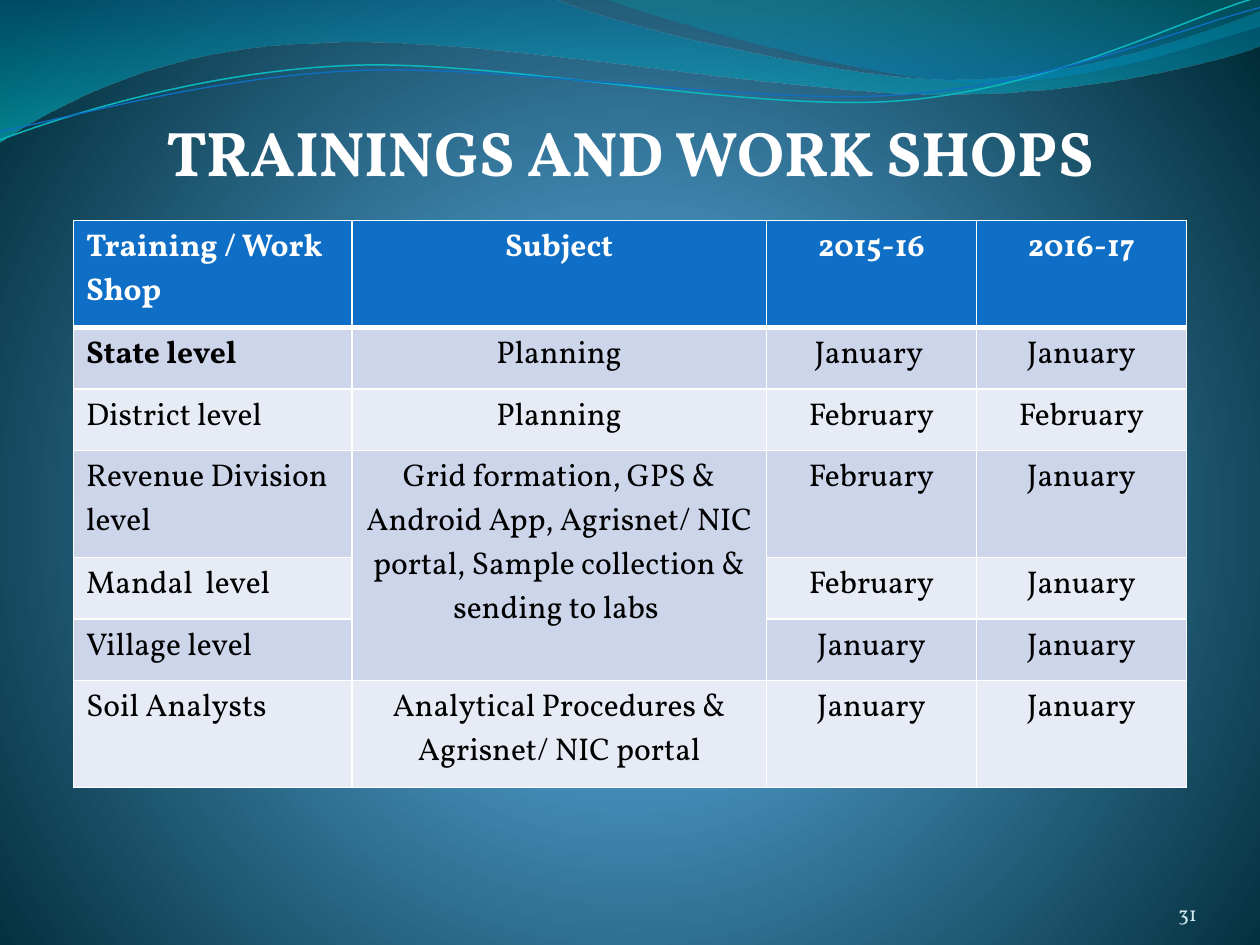
from itertools import chain

from lxml import etree
from pptx import Presentation
from pptx.dml.color import RGBColor
from pptx.enum.text import MSO_ANCHOR as Anchor, PP_ALIGN as Align
from pptx.oxml import parse_xml
from pptx.oxml.ns import nsdecls, qn
from pptx.util import Pt

FONT = "Vollkorn"
COLORS = {
    "white": "FFFFFF", "black": "000000", "header": "0F6FC6",
    "band_dark": "CCD5EA", "band_light": "E7EBF5", "number": "D1EAEE",
    "teal_line": "0AB8BF", "blue_line": "0F6FC6",
    "glow": "4AA0D6", "glow_mid": "4C98C7", "edge": "002C38",
    "wave_blue": "0074A1", "wave_teal": "00C6CF",
    "crest_teal": "00A1A9", "crest_blue": "008BBF",
}
DOWNWARD = '<a:lin ang="5400000" scaled="0"/>'
RADIAL = ('<a:path path="circle">'
          '<a:fillToRect l="10000" t="110000" r="10000" b="100000"/></a:path>')

# Each step is one point (straight) or two controls and an end (cubic curve).
WAVE = [
    ((0, 0),),
    ((316.8, -0.7),),
    ((342.7, 12.2), (478.1, 45.4), (545.8, 45.4)),
    ((614.2, 45.4), (689.8, 18.7), (720, 6.5)),
    ((720.7, 25.9),),
    ((707.8, 31.7), (626.4, 54.7), (537.1, 54)),
    ((447.8, 54), (275, 20.2), (185, 24.5)),
    ((92.9, 25.9), (33.1, 59.8), (-0.7, 81.4)),
]
CREST = [
    ((345, -0.7),),
    ((366.5, 7.9), (491, 44.6), (553.7, 46.8)),
    ((616.3, 49.7), (691.9, 23), (720, 15.1)),
    ((720, 0),),
]
CURVE_TILT = -2.7
TEAL_CURVE = [
    ((-1.4, 63),),
    ((33.8, 51.7), (114.1, 29.4), (199.8, 29.9)),
    ((284.9, 30.3), (425.8, 67.3), (512.4, 64.9)),
    ((599, 62.4), (676.5, 25.7), (720.2, 15.5)),
]
BLUE_CURVE = [
    ((-1.1, 58),),
    ((32.9, 53.7), (118.3, 32.5), (204.1, 33)),
    ((290.6, 33.4), (428.9, 63.8), (515.5, 61.4)),
    ((601.3, 59.6), (678.5, 30.1), (721.4, 21.3)),
]

COLUMN_WIDTHS = [159, 237, 120, 120]
TALL, SHORT = 61.2, 35.1
ROW_HEIGHTS = [TALL, SHORT, SHORT, TALL, SHORT, SHORT, TALL]
SCHEDULE = [
    ["Training / Work Shop", "Subject", "2015-16", "2016-17"],
    ["State level", "Planning", "January ", "January"],
    ["District level", "Planning", "February", "February"],
    ["Revenue Division level",
     "Grid formation, GPS & Android App, Agrisnet/ NIC portal, "
     "Sample collection & sending to labs ", "February", "January"],
    ["Mandal  level", None, "February", "January"],
    ["Village level", None, "January", "January"],
    ["Soil Analysts", "Analytical Procedures & Agrisnet/ NIC portal",
     "January", "January"],
]


def rgb(name):
    return RGBColor.from_string(COLORS[name])


def set_gradient(fill, owner, stops, direction):
    """Give the fill found inside owner stops of (percent, color, opacity)."""
    fill.solid()
    solid = owner.find(".//" + qn("a:solidFill"))
    marks = "".join(
        f'<a:gs pos="{position * 1000}"><a:srgbClr val="{COLORS[color]}">'
        f'<a:alpha val="{opacity * 1000}"/></a:srgbClr></a:gs>'
        for position, color, opacity in stops)
    solid.getparent().replace(solid, parse_xml(
        f'<a:gradFill {nsdecls("a")} rotWithShape="1">'
        f'<a:gsLst>{marks}</a:gsLst>{direction}</a:gradFill>'))


def bend(outline, steps):
    """Join the straight segments of each three-point step into one cubic."""
    segments = iter(outline.element.findall(".//" + qn("a:lnTo")))
    for step in steps[1:]:
        parts = [next(segments) for _ in step]
        if len(parts) == 3:
            cubic = etree.Element(qn("a:cubicBezTo"))
            parts[0].addprevious(cubic)
            for part in parts:
                cubic.append(part[0])
                part.getparent().remove(part)


def add_outline(slide, steps, close):
    points = [(x * 100, y * 100) for x, y in chain.from_iterable(steps)]
    builder = slide.shapes.build_freeform(*points[0], scale=Pt(1) / 100)
    builder.add_line_segments(points[1:], close=close)
    outline = builder.convert_to_shape()
    bend(outline, steps)
    outline.shadow.inherit = False
    return outline


def add_wave(slide, steps, stops):
    wave = add_outline(slide, steps, True)
    wave.line.fill.background()
    set_gradient(wave.fill, wave.element.spPr, stops, DOWNWARD)


def add_curve(slide, steps, color, width):
    curve = add_outline(slide, steps, False)
    curve.rotation = CURVE_TILT
    curve.fill.background()
    curve.line.color.rgb = rgb(color)
    curve.line.width = Pt(width)


def write(frame, text, size, color, align, bold=False):
    paragraph = frame.paragraphs[0]
    paragraph.alignment = align
    run = paragraph.add_run()
    run.text = text
    run.font.name = FONT
    run.font.size = Pt(size)
    run.font.bold = bold
    run.font.color.rgb = rgb(color)


def add_label(slide, box, text, size, color, align, bold=False, top_inset=0):
    frame = slide.shapes.add_textbox(*map(Pt, box)).text_frame
    frame.word_wrap = True
    frame.vertical_anchor = Anchor.BOTTOM
    frame.margin_left = frame.margin_right = frame.margin_bottom = 0
    frame.margin_top = Pt(top_inset)
    write(frame, text, size, color, align, bold)


def set_borders(cell, widths):
    properties = cell._tc.get_or_add_tcPr()
    for index, (side, width) in enumerate(widths.items()):
        border = etree.Element(qn(f"a:ln{side}"), w=str(Pt(width)))
        paint = etree.SubElement(border, qn("a:solidFill"))
        etree.SubElement(paint, qn("a:srgbClr"), val=COLORS["white"])
        properties.insert(index, border)


def add_schedule(slide):
    table = slide.shapes.add_table(
        len(ROW_HEIGHTS), len(COLUMN_WIDTHS), Pt(42), Pt(126),
        Pt(sum(COLUMN_WIDTHS)), Pt(sum(ROW_HEIGHTS))).table
    table.first_row = table.horz_banding = False
    for column, width in zip(table.columns, COLUMN_WIDTHS):
        column.width = Pt(width)
    for row, height in zip(table.rows, ROW_HEIGHTS):
        row.height = Pt(height)
    table.cell(3, 1).merge(table.cell(5, 1))

    for r, texts in enumerate(SCHEDULE):
        band = "header" if r == 0 else "band_dark" if r % 2 else "band_light"
        for c, text in enumerate(texts):
            cell = table.cell(r, c)
            cell.fill.solid()
            cell.fill.fore_color.rgb = rgb(band)
            set_borders(cell, {"L": 1, "R": 1, "T": 3 if r == 1 else 1,
                               "B": 3 if r == 0 else 1})
            if text:
                write(cell.text_frame, text, 18,
                      "white" if r == 0 else "black",
                      Align.CENTER if c else Align.LEFT,
                      bold=r == 0 or (r, c) == (1, 0))


def main():
    deck = Presentation()
    deck.slide_width, deck.slide_height = Pt(720), Pt(540)
    slide = deck.slides.add_slide(deck.slide_layouts[6])

    set_gradient(slide.background.fill, slide.element,
                 [(0, "glow", 100), (25, "glow_mid", 100), (100, "edge", 100)],
                 RADIAL)
    add_wave(slide, WAVE, [(0, "wave_blue", 45), (100, "wave_teal", 55)])
    add_wave(slide, CREST, [(0, "crest_teal", 30), (80, "crest_blue", 45)])
    add_curve(slide, TEAL_CURVE, "teal_line", 0.85)
    add_curve(slide, BLUE_CURVE, "blue_line", 0.75)

    add_label(slide, (36, 54, 648, 54), "TRAININGS AND WORK SHOPS", 36,
              "white", Align.CENTER, bold=True, top_inset=3.6)
    add_schedule(slide)
    add_label(slide, (624, 500.5, 60, 28.75), "31", 12, "number", Align.RIGHT)
    deck.save("out.pptx")


if __name__ == "__main__":
    main()
